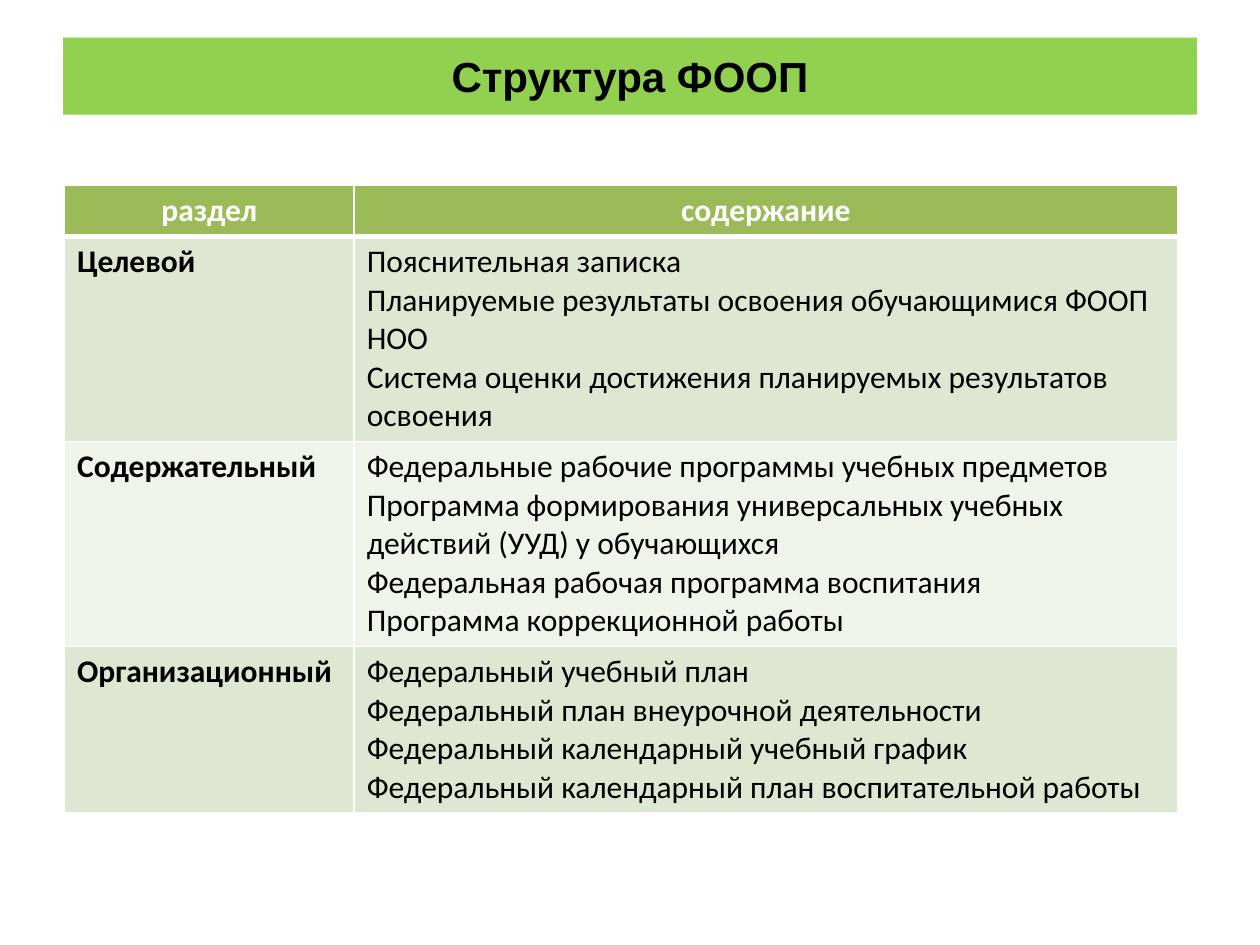
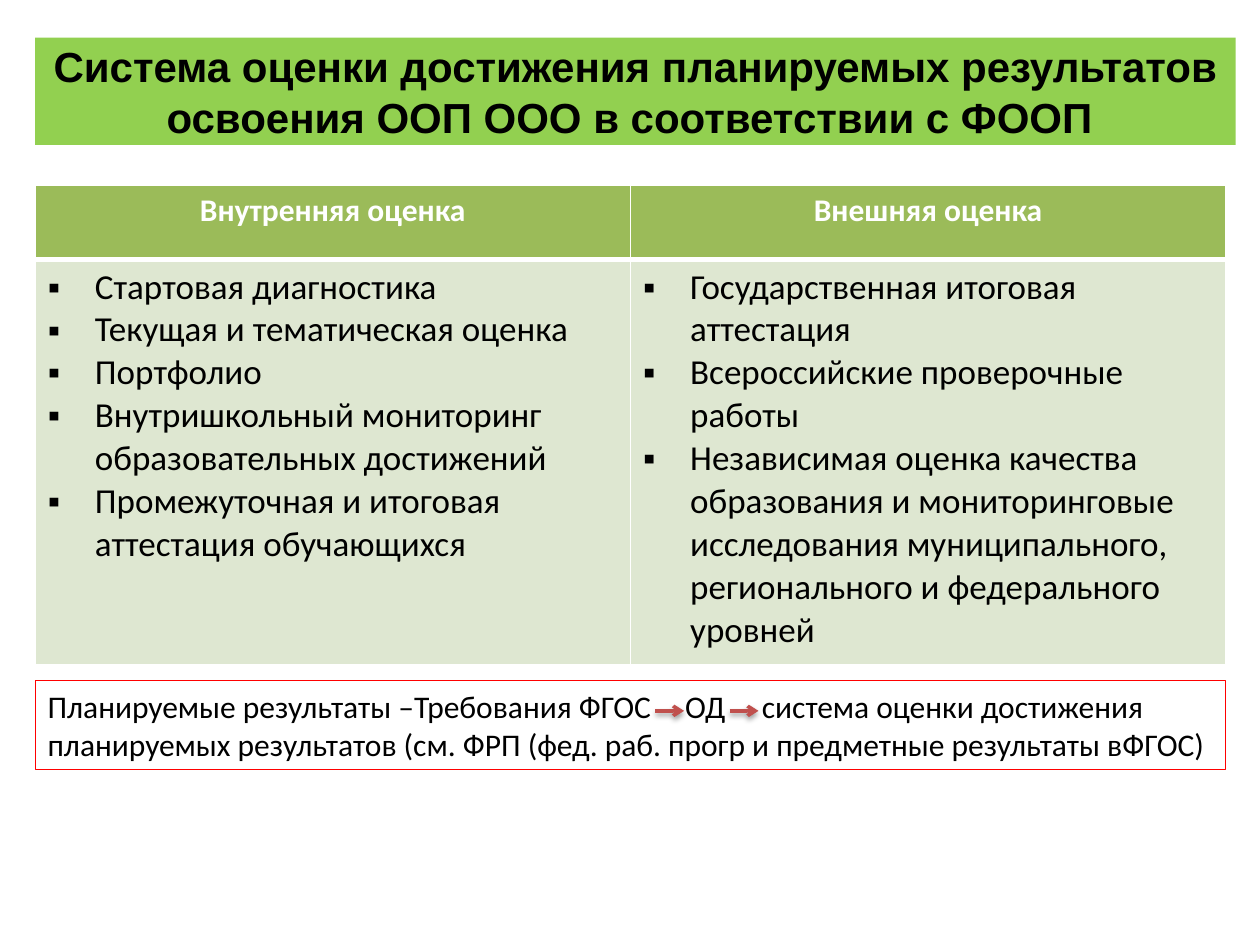
"""Build two slides on the structure of the programme and its assessment system."""
from lxml.etree import SubElement
from pptx import Presentation
from pptx.dml.color import RGBColor
from pptx.enum.shapes import MSO_CONNECTOR as CONN
from pptx.enum.text import MSO_ANCHOR as ANCHOR, MSO_AUTO_SIZE as AUTO, PP_ALIGN as ALIGN
from pptx.oxml.ns import qn
from pptx.util import Cm, Pt

BLACK = RGBColor(0x00, 0x00, 0x00)
WHITE = RGBColor(0xFF, 0xFF, 0xFF)
LIME = RGBColor(0x92, 0xD0, 0x50)
OLIVE = RGBColor(0x9B, 0xBB, 0x59)
SAGE = RGBColor(0xDE, 0xE7, 0xD1)
PALE = RGBColor(0xEF, 0xF3, 0xEA)
RED = RGBColor(0xFF, 0x00, 0x00)
BRICK = RGBColor(0xC0, 0x50, 0x4D)

TITLE_TOP, TABLE_TOP = 0.76, 3.73
INDENT = 0.95

SECTIONS = [
    ("раздел", "содержание"),
    ("Целевой",
     "Пояснительная записка\v"
     "Планируемые результаты освоения обучающимися ФООП НОО\v"
     "Система оценки достижения планируемых результатов освоения"),
    ("Содержательный",
     "Федеральные рабочие программы учебных предметов\v"
     "Программа формирования универсальных учебных действий (УУД) у обучающихся\v"
     "Федеральная рабочая программа воспитания\v"
     "Программа коррекционной работы"),
    ("Организационный",
     "Федеральный учебный план\v"
     "Федеральный план внеурочной деятельности\v"
     "Федеральный календарный учебный график\v"
     "Федеральный календарный план воспитательной работы"),
]

ASSESSMENT = [
    ("Внутренняя оценка", "Внешняя оценка"),
    ("Стартовая диагностика\n"
     "Текущая и тематическая оценка\n"
     "Портфолио\n"
     "Внутришкольный мониторинг образовательных достижений\n"
     "Промежуточная и итоговая аттестация обучающихся",
     "Государственная итоговая аттестация\n"
     "Всероссийские проверочные работы\n"
     "Независимая оценка качества образования и мониторинговые исследования "
     "муниципального, регионального и федерального уровней"),
]

SUMMARY = ("Планируемые результаты –Требования ФГОС\tОД\tсистема оценки достижения "
           "планируемых результатов (см. ФРП (фед. раб. прогр и предметные "
           "результаты вФГОС)")


class Deck:
    def __init__(self):
        self.prs = Presentation()
        self.prs.slide_width, self.prs.slide_height = Cm(25.4), Cm(19.05)
        self.s = None

    def style(self, tf, size, color=BLACK, bold=False, font="Calibri", align=ALIGN.LEFT):
        for p in tf.paragraphs:
            p.alignment = align
            for r in p.runs:
                r.font.name, r.font.size, r.font.bold = font, Pt(size), bold
                r.font.color.rgb = color

    def slide(self, title, left, width, height):
        self.s = self.prs.slides.add_slide(self.prs.slide_layouts[5])
        sp = self.s.shapes.title
        sp.left, sp.top, sp.width, sp.height = Cm(left), Cm(TITLE_TOP), Cm(width), Cm(height)
        sp.fill.solid()
        sp.fill.fore_color.rgb = LIME
        tf = sp.text_frame
        tf.text = title
        tf.auto_size, tf.vertical_anchor = AUTO.NONE, ANCHOR.MIDDLE
        self.style(tf, 24, bold=True, font="Arial", align=ALIGN.CENTER)

    def borders(self, cell, top, bottom):
        tc_pr = cell._tc.get_or_add_tcPr()
        for side, width in (("L", 1), ("R", 1), ("T", top), ("B", bottom)):
            ln = SubElement(tc_pr, qn(f"a:ln{side}"), w=str(Pt(width)))
            fill = SubElement(ln, qn("a:solidFill"))
            SubElement(fill, qn("a:srgbClr"), val=str(WHITE))

    def bullets(self, tf):
        for p in tf.paragraphs:
            p_pr = p._p.get_or_add_pPr()
            p_pr.set("marL", str(Cm(INDENT)))
            p_pr.set("indent", str(-Cm(INDENT)))
            SubElement(p_pr, qn("a:buFont"), typeface="Arial")
            SubElement(p_pr, qn("a:buChar"), char="▪")

    def table(self, rows, left, widths, heights, size=18, label_column=False, bulleted=False):
        frame = self.s.shapes.add_table(len(rows), len(widths), Cm(left), Cm(TABLE_TOP),
                                        Cm(sum(widths)), Cm(sum(heights)))
        table = frame.table
        for column, width in zip(table.columns, widths):
            column.width = Cm(width)
        for i, (texts, height) in enumerate(zip(rows, heights)):
            table.rows[i].height = Cm(height)
            for j, text in enumerate(texts):
                cell = table.cell(i, j)
                tf = cell.text_frame
                tf.text = text
                self.borders(cell, 3 if i == 1 else 1, 3 if i == 0 else 1)
                cell.fill.solid()
                if i == 0:
                    cell.fill.fore_color.rgb = OLIVE
                    self.style(tf, 18, WHITE, True, align=ALIGN.CENTER)
                    continue
                cell.fill.fore_color.rgb = SAGE if i % 2 else PALE
                self.style(tf, size, bold=label_column and j == 0)
                if bulleted:
                    self.bullets(tf)

    def framed_text(self, text, left, top, width, height, tabs):
        sp = self.s.shapes.add_textbox(Cm(left), Cm(top), Cm(width), Cm(height))
        sp.line.color.rgb, sp.line.width = RED, Pt(0.75)
        tf = sp.text_frame
        tf.text = text
        tf.word_wrap, tf.auto_size = True, AUTO.SHAPE_TO_FIT_TEXT
        self.style(tf, 18)
        tab_list = SubElement(tf.paragraphs[0]._p.get_or_add_pPr(), qn("a:tabLst"))
        for pos in tabs:
            SubElement(tab_list, qn("a:tab"), pos=str(Cm(pos)), algn="l")

    def arrow(self, left, y, length):
        line = self.s.shapes.add_connector(CONN.STRAIGHT, Cm(left), Cm(y),
                                           Cm(left + length), Cm(y))
        line.line.color.rgb, line.line.width = BRICK, Pt(2)
        SubElement(line.line._get_or_add_ln(), qn("a:tailEnd"), type="arrow")
        effects = SubElement(line._element.spPr, qn("a:effectLst"))
        shadow = SubElement(effects, qn("a:outerShdw"), blurRad=str(Pt(3.1)),
                            dist=str(Pt(1.6)), dir="5400000", rotWithShape="0")
        color = SubElement(shadow, qn("a:srgbClr"), val=str(BLACK))
        SubElement(color, qn("a:alpha"), val="38000")


def main():
    deck = Deck()
    deck.slide("Структура ФООП", 1.27, 22.86, 1.55)
    deck.table(SECTIONS, 1.3, (5.84, 16.6), (1.04, 4.06, 4.06, 3.3), label_column=True)

    deck.slide("Система оценки достижения планируемых результатов "
               "освоения ООП ООО в соответствии с ФООП ", 0.71, 24.2, 2.16)
    deck.table(ASSESSMENT, 0.71, (12, 12), (1.5, 8.18), size=20, bulleted=True)
    deck.framed_text(SUMMARY, 0.71, 13.72, 24, 1.8, tabs=(12.85, 14.4))
    for left in (13.21, 14.71):
        deck.arrow(left, 14.33, 0.58)
    deck.prs.save("out.pptx")


if __name__ == "__main__":
    main()
